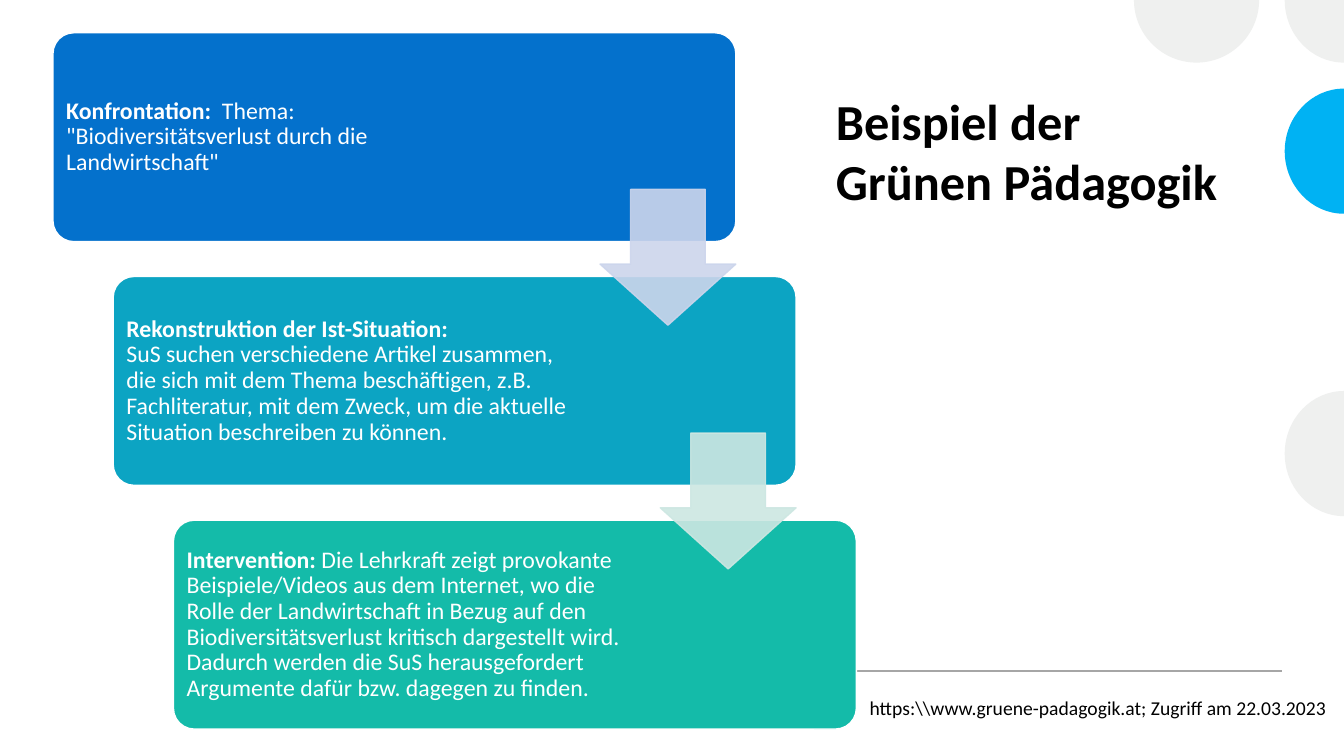
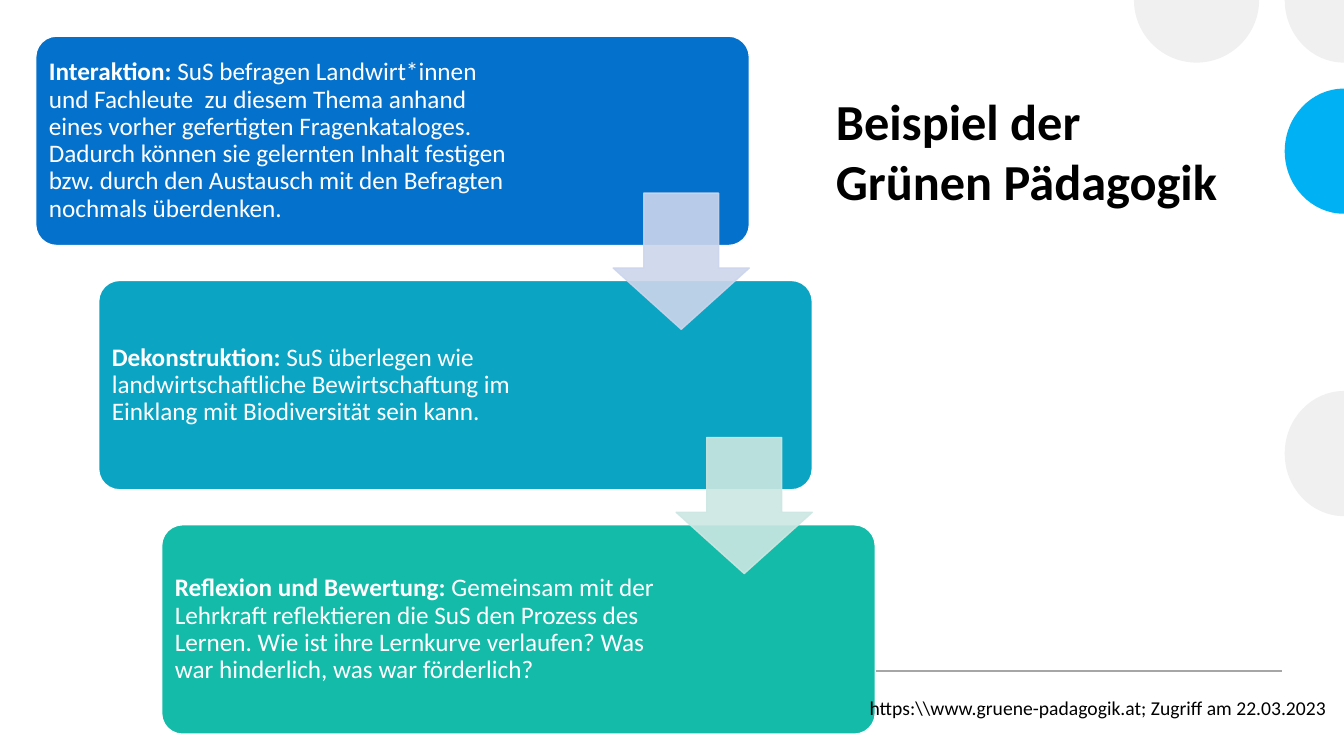
import math

from lxml import etree
from pptx import Presentation
from pptx import util as u
from pptx.dml.color import RGBColor
from pptx.enum import shapes, text
from pptx.oxml.ns import qn

BLACK = RGBColor(0x00, 0x00, 0x00)
WHITE = RGBColor(0xFF, 0xFF, 0xFF)
PALE_GREY = RGBColor(0xEF, 0xF0, 0xEF)
RULE_GREY = RGBColor(0xA6, 0xA6, 0xA6)
SKY = RGBColor(0x00, 0xB2, 0xF3)
CARD_COLORS = (
    RGBColor(0x04, 0x71, 0xCC),
    RGBColor(0x0C, 0xA4, 0xC3),
    RGBColor(0x14, 0xBB, 0xA9),
)
ARROW_COLORS = (RGBColor(0xCC, 0xD5, 0xEC), RGBColor(0xCD, 0xE7, 0xE2))

FONT = "Calibri"
COLUMNS, ROWS = 32, 18
CELL = u.Inches(7.5) / ROWS

TITLE = "Beispiel der \vGrünen Pädagogik"
SOURCE = r"https:\\www.gruene-padagogik.at; Zugriff am 22.03.2023"

# Each edge circle: centre, radii, start angle, quarters shown, colour
EDGE_CIRCLES = (
    ((28.49, 0), (1.49, 1.49), 0, 2, PALE_GREY),
    ((COLUMNS, 0), (1.41, 1.49), 90, 1, PALE_GREY),
    ((COLUMNS, 3.6), (1.41, 1.49), 90, 2, SKY),
    ((COLUMNS, 10.8), (1.41, 1.49), 90, 2, PALE_GREY),
)

# Each page: area of the staircase (left, top, width, height), text size, steps
PAGES = (
    ((1.26, 0.78, 19.13, 16.58), 17, (
        ("Konfrontation:",
         '  Thema: "Biodiversitätsverlust durch die Landwirtschaft"'),
        ("Rekonstruktion der Ist-Situation: ",
         "\nSuS suchen verschiedene Artikel zusammen, die sich mit dem Thema "
         "beschäftigen, z.B. Fachliteratur, mit dem Zweck, um die aktuelle "
         "Situation beschreiben zu können."),
        ("Intervention: ",
         "Die Lehrkraft zeigt provokante Beispiele/Videos aus dem Internet, wo "
         "die Rolle der Landwirtschaft in Bezug auf den Biodiversitätsverlust "
         "kritisch dargestellt wird. Dadurch werden die SuS herausgefordert "
         "Argumente dafür bzw. dagegen zu finden."),
    )),
    ((0.85, 0.86, 19.99, 16.62), 18, (
        ("Interaktion: ",
         "SuS befragen Landwirt*innen und Fachleute  zu diesem Thema anhand "
         "eines vorher gefertigten Fragenkataloges. Dadurch können sie "
         "gelernten Inhalt festigen bzw. durch den Austausch mit den "
         "Befragten nochmals überdenken."),
        ("Dekonstruktion: ",
         "SuS überlegen wie landwirtschaftliche Bewirtschaftung im Einklang "
         "mit Biodiversität sein kann."),
        ("Reflexion und Bewertung:",
         " Gemeinsam mit der Lehrkraft reflektieren die SuS den Prozess des "
         "Lernen. Wie ist ihre Lernkurve verlaufen? Was war hinderlich, was "
         "war förderlich?"),
    )),
)


def cells(*counts):
    """Turn counts of grid cells into lengths."""
    return [u.Emu(round(count * CELL)) for count in counts]


def set_opacity(shape, percent):
    for color in shape._element.spPr.iter(qn("a:srgbClr")):
        etree.SubElement(color, qn("a:alpha"), val=str(percent * 1000))


def bend_segments(shape, count):
    """Turn each three of the first line segments into one of count curves."""
    lines = list(shape._element.spPr.iter(qn("a:lnTo")))
    for i in range(0, 3 * count, 3):
        first, *others = lines[i:i + 3]
        first.tag = qn("a:cubicBezTo")
        for line in others:
            first.append(line[0])
            line.getparent().remove(line)


class StepDeck:
    def __init__(self):
        self.deck = Presentation()
        self.deck.slide_width, self.deck.slide_height = cells(COLUMNS, ROWS)
        self.page = None

    def new_page(self):
        self.page = self.deck.slides.add_slide(self.deck.slide_layouts[5])
        self.title()
        for circle in EDGE_CIRCLES:
            self.edge_circle(*circle)
        self.rule(19.66, 30.53, 15.98)

    def style(self, paragraph, size, color, bold=None):
        font = paragraph.font
        font.name, font.size, font.bold = FONT, u.Pt(size), bold
        font.color.rgb = color

    def paint(self, shape, fill, line=None):
        shape.shadow.inherit = False
        shape.fill.solid()
        shape.fill.fore_color.rgb = fill
        if line is None:
            shape.line.fill.background()
        else:
            shape.line.color.rgb = line
            shape.line.width = u.Pt(1)

    def title(self):
        box = self.page.shapes.title
        box.left, box.top, box.width, box.height = cells(19.66, 2.02, 11.98, 3.82)
        frame = box.text_frame
        frame.auto_size = text.MSO_AUTO_SIZE.NONE
        frame.vertical_anchor = text.MSO_ANCHOR.TOP
        para = frame.paragraphs[0]
        para.text = TITLE
        para.alignment = text.PP_ALIGN.LEFT
        self.style(para, 36, BLACK, bold=True)

    def edge_circle(self, center, radii, start, quarters, color):
        """Draw the quarters of a circle that lie on the slide."""
        pull = 0.55  # reach of a control point, as a share of the radius

        def point(angle, along):
            cos, sin = math.cos(angle), math.sin(angle)
            return cells(center[0] + radii[0] * (cos - along * sin),
                         center[1] + radii[1] * (sin + along * cos))

        angles = [math.radians(start + 90 * i) for i in range(quarters + 1)]
        builder = self.page.shapes.build_freeform(*point(angles[0], 0))
        for begin, end in zip(angles, angles[1:]):
            builder.add_line_segments(
                [point(begin, pull), point(end, -pull), point(end, 0)], close=False)
        builder.add_line_segments([cells(*center)])
        shape = builder.convert_to_shape()
        bend_segments(shape, quarters)
        self.paint(shape, color)

    def rule(self, left, right, y):
        line = self.page.shapes.add_connector(
            shapes.MSO_CONNECTOR.STRAIGHT, *cells(left, y, right, y))
        line.line.color.rgb = RULE_GREY
        line.line.width = u.Pt(1)
        etree.SubElement(line._element.spPr, qn("a:effectLst"))

    def card(self, place, color, step, size, right_margin):
        card = self.page.shapes.add_shape(
            shapes.MSO_SHAPE.ROUNDED_RECTANGLE, *cells(*place))
        card.adjustments[0] = 0.1
        self.paint(card, color, WHITE)
        frame = card.text_frame
        frame.word_wrap = True
        frame.vertical_anchor = text.MSO_ANCHOR.MIDDLE
        frame.margin_left = frame.margin_top = frame.margin_bottom = u.Inches(0.07)
        frame.margin_right = cells(right_margin)[0]
        para = frame.paragraphs[0]
        para.alignment = text.PP_ALIGN.LEFT
        para.line_spacing = 0.9
        self.style(para, size, WHITE)
        heading, body = step
        span = para.add_run()
        span.text = heading
        span.font.bold = True
        if body.startswith("\n"):
            para.add_line_break()
        para.add_run().text = body.lstrip("\n")

    def arrow(self, left, top, side, color):
        arrow = self.page.shapes.add_shape(
            shapes.MSO_SHAPE.DOWN_ARROW, *cells(left, top, side, side))
        arrow.adjustments[0], arrow.adjustments[1] = 0.55, 0.45
        self.paint(arrow, color, color)
        set_opacity(arrow, 90)

    def staircase(self, area, size, steps):
        """Draw three cards going down to the right, joined by arrows."""
        left, top, width, height = area
        card_width, card_height = 0.85 * width, 0.3 * height
        corners = [(left + 0.075 * width * i, top + 0.35 * height * i)
                   for i in range(len(steps))]
        for i, ((x, y), color, step) in enumerate(zip(corners, CARD_COLORS, steps)):
            self.card((x, y, card_width, card_height), color, step, size,
                      right_margin=4.9 if i else 5.4)
        side = 0.65 * card_height
        for (x, y), color in zip(corners, ARROW_COLORS):
            self.arrow(x + card_width - side, y + 0.75 * card_height, side, color)

    def source(self):
        box = self.page.shapes.add_textbox(*cells(18.09, 16.25, 13.73, 1.01))
        frame = box.text_frame
        frame.word_wrap = True
        frame.vertical_anchor = text.MSO_ANCHOR.BOTTOM
        para = frame.paragraphs[0]
        para.text = SOURCE
        para.alignment = text.PP_ALIGN.RIGHT
        para.line_spacing = 0.9
        self.style(para, 14, BLACK)


def main():
    show = StepDeck()
    for area, size, steps in PAGES:
        show.new_page()
        show.staircase(area, size, steps)
        show.source()
    show.deck.save("out.pptx")


if __name__ == "__main__":
    main()
